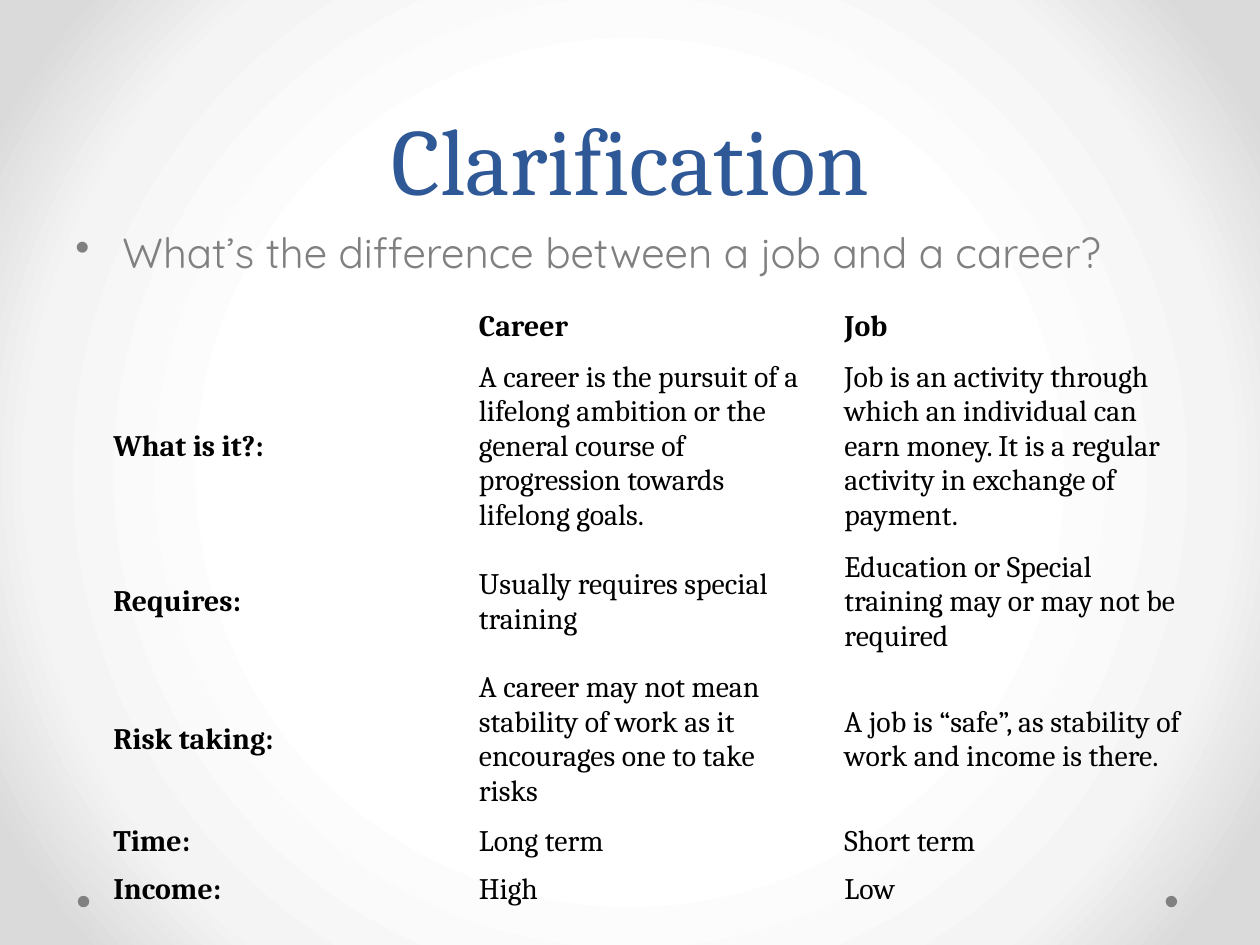
import pptx
import pptx.dml.color
import pptx.enum.shapes
import pptx.enum.text
import pptx.oxml
import pptx.oxml.ns
import pptx.util
from pptx.util import Cm

ANCHOR = pptx.enum.text.MSO_ANCHOR
ALIGN = pptx.enum.text.PP_ALIGN
NO_STYLE_NO_GRID = "{2D5ABB26-0587-4C30-8999-92F81FD0307C}"
GRADIENT_STOPS = [(50, "FFFFFF"), (76, "F4F4F4"), (92, "DADADA")]
COLUMN_WIDTH = 7.37
ROW_HEIGHTS = [0.89, 3.56, 2.03, 2.24, 0.89, 0.89]
COMPARISON = [
    ("", "Career", "Job"),
    ("What is it?:",
     "A career is the pursuit of a lifelong ambition or the general course of "
     "progression towards lifelong goals.",
     "Job is an activity through which an individual can earn money. It is a "
     "regular activity in exchange of payment."),
    ("Requires:", "Usually requires special training",
     "Education or Special training may or may not be required"),
    ("Risk taking:",
     "A career may not mean stability of work as it encourages one to take risks",
     "A job is “safe”, as stability of work and income is there."),
    ("Time:", "Long term", "Short term"),
    ("Income:", "High", "Low"),
]


def color(value):
    return pptx.dml.color.RGBColor.from_string(value)


def set_font(paragraph, name, size, value, bold=False):
    font = paragraph.font
    font.name, font.size, font.bold = name, pptx.util.Pt(size), bold
    font.color.rgb = color(value)


def set_background(slide):
    slide.background.fill.solid()
    properties = slide.element.find(".//" + pptx.oxml.ns.qn("p:bgPr"))
    stops = "".join(
        f'<a:gs pos="{position * 1000}"><a:srgbClr val="{value}"/></a:gs>'
        for position, value in GRADIENT_STOPS)
    gradient = pptx.oxml.parse_xml(
        f'<a:gradFill {pptx.oxml.ns.nsdecls("a")} rotWithShape="1">'
        f'<a:gsLst>{stops}</a:gsLst><a:path path="circle">'
        '<a:fillToRect l="50000" t="50000" r="50000" b="50000"/></a:path></a:gradFill>')
    properties.replace(properties[0], gradient)


def add_dot(slide, left):
    shape = slide.shapes.add_shape(
        pptx.enum.shapes.MSO_SHAPE.OVAL, Cm(left), Cm(18.06), Cm(0.23), Cm(0.23))
    shape.shadow.inherit = False
    shape.fill.solid()
    shape.fill.fore_color.rgb = color("808080")
    shape.line.fill.background()


def add_text(slide, text, top, height, anchor):
    shape = slide.shapes.add_textbox(Cm(1.27), Cm(top), Cm(22.86), Cm(height))
    frame = shape.text_frame
    frame.word_wrap = True
    frame.vertical_anchor = anchor
    frame.text = text
    return frame.paragraphs[0]


def add_bullet(paragraph):
    properties = paragraph._p.get_or_add_pPr()
    properties.set("marL", str(Cm(0.95)))
    properties.set("indent", str(-Cm(0.95)))
    properties.insert_element_before(
        pptx.oxml.parse_xml(f'<a:buChar {pptx.oxml.ns.nsdecls("a")} char="•"/>'),
        "a:tabLst", "a:defRPr", "a:extLst")


def add_comparison(slide):
    table = slide.shapes.add_table(
        len(COMPARISON), 3, Cm(2.03), Cm(6.1),
        Cm(3 * COLUMN_WIDTH), Cm(sum(ROW_HEIGHTS))).table
    table.first_row = table.horz_banding = False
    table._tbl.tblPr.find(pptx.oxml.ns.qn("a:tableStyleId")).text = NO_STYLE_NO_GRID
    for column in table.columns:
        column.width = Cm(COLUMN_WIDTH)
    for row_index, texts in enumerate(COMPARISON):
        table.rows[row_index].height = Cm(ROW_HEIGHTS[row_index])
        for column_index, text in enumerate(texts):
            cell = table.cell(row_index, column_index)
            cell.fill.background()
            cell.vertical_anchor = ANCHOR.MIDDLE
            cell.text = text
            heading = row_index == 0 or column_index == 0
            set_font(cell.text_frame.paragraphs[0], "Cambria", 17, "000000", heading)


def main():
    presentation = pptx.Presentation()
    presentation.slide_width, presentation.slide_height = Cm(25.4), Cm(19.05)
    slide = presentation.slides.add_slide(presentation.slide_layouts[6])

    # Background and corner dots
    set_background(slide)
    for left in (23.5, 1.57):
        add_dot(slide, left)

    # Title
    title = add_text(slide, "Clarification", 0, 4.45, ANCHOR.BOTTOM)
    title.alignment = ALIGN.CENTER
    title.line_spacing = pptx.util.Pt(58)
    set_font(title, "Cambria", 54, "2F5897")

    # Question
    question = add_text(slide, "What’s the difference between a job and a career?",
                        4.45, 12.57, ANCHOR.TOP)
    question.space_before = pptx.util.Pt(4.8)
    set_font(question, "Quicksand", 24, "808080")
    add_bullet(question)

    # Comparison table
    add_comparison(slide)

    presentation.save("out.pptx")


if __name__ == "__main__":
    main()
